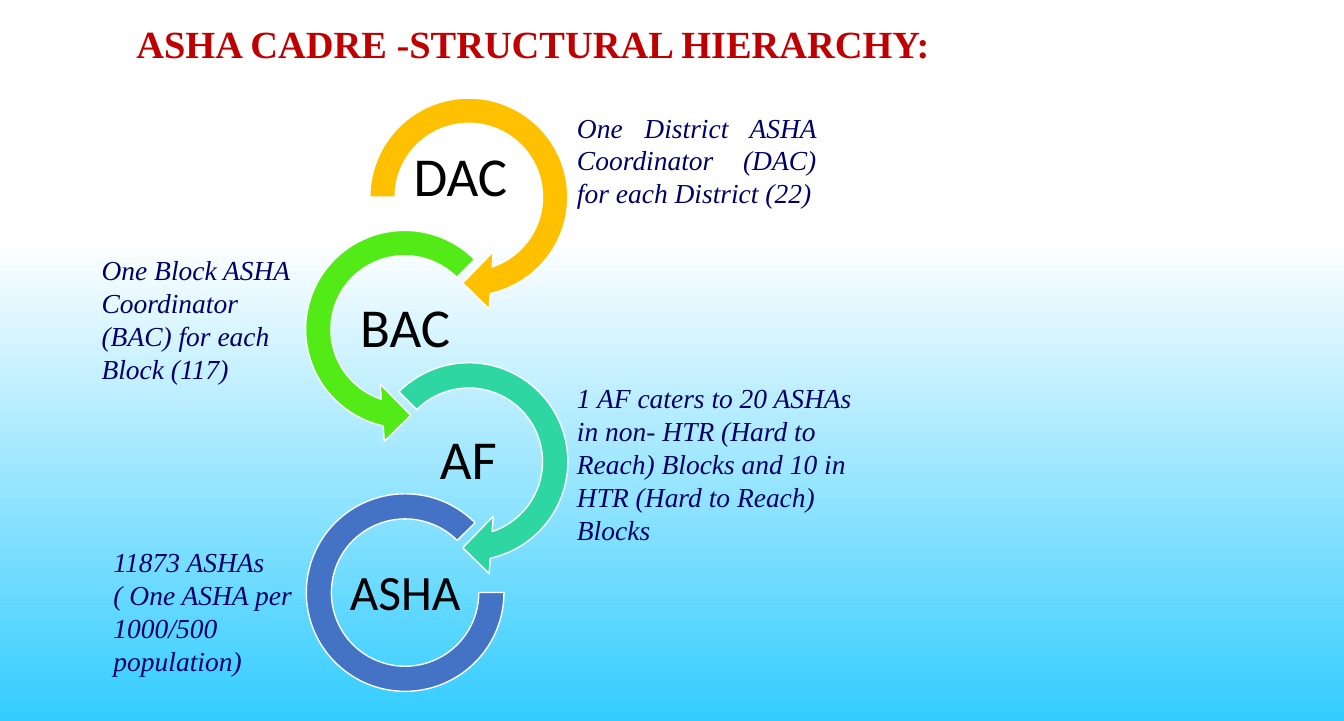
from pptx import Presentation
from pptx.dml.color import RGBColor
from pptx.enum.shapes import MSO_SHAPE
from pptx.enum.text import MSO_ANCHOR, MSO_AUTO_SIZE, PP_ALIGN
from pptx.util import Inches, Pt

WHITE = RGBColor(0xFF, 0xFF, 0xFF)
BLACK = RGBColor(0x00, 0x00, 0x00)
SKY = RGBColor(0x33, 0xCC, 0xFF)
RED = RGBColor(0xC0, 0x00, 0x00)
NAVY = RGBColor(0x00, 0x00, 0x66)
AMBER = RGBColor(0xFF, 0xC0, 0x00)
GREEN = RGBColor(0x53, 0xEB, 0x17)
TEAL = RGBColor(0x2E, 0xD7, 0xA1)
BLUE = RGBColor(0x44, 0x72, 0xC4)


def format_text(shape, text, font_name, size, color, alignment=PP_ALIGN.LEFT, spacing=1.0):
    frame = shape.text_frame
    frame.word_wrap = True
    frame.auto_size = MSO_AUTO_SIZE.NONE
    frame.text = text
    paragraph = frame.paragraphs[0]
    paragraph.alignment = alignment
    paragraph.line_spacing = spacing
    paragraph.font.name = font_name
    paragraph.font.size = Pt(size)
    paragraph.font.color.rgb = color
    return frame, paragraph


presentation = Presentation()
presentation.slide_width = Inches(13.6)
presentation.slide_height = Inches(7.3)
slide = presentation.slides.add_slide(presentation.slide_layouts[5])

background = slide.background.fill
background.gradient()
background.gradient_angle = 270
for stop, position, color in zip(background.gradient_stops, (0.33, 1), (WHITE, SKY)):
    stop.position = position
    stop.color.rgb = color

title = slide.shapes.title
title.left, title.top = Inches(1.28), Inches(0.21)
title.width, title.height = Inches(10.59), Inches(0.91)
frame, paragraph = format_text(
    title, "ASHA CADRE -STRUCTURAL HIERARCHY:", "Times New Roman", 28, RED, spacing=0.9)
frame.vertical_anchor = MSO_ANCHOR.TOP
paragraph.font.bold = True

PITCH = 1.34
levels = [
    ("DAC", 40, 1.0, 4.66, 1.44, MSO_SHAPE.CIRCULAR_ARROW, 3.58, 0.83, 2.33, AMBER,
     (0.1098, 11.423, 45, 108, 0.125)),
    ("BAC", 40, 0.9, 4.1, 3.01, MSO_SHAPE.LEFT_CIRCULAR_ARROW, 2.93, 0.83 + PITCH, 2.33, GREEN,
     (0.1098, 11.423, 63, 189, 0.125)),
    ("AF", 40, 0.9, 4.74, 3.01 + PITCH, MSO_SHAPE.CIRCULAR_ARROW, 3.58, 0.83 + 2 * PITCH, 2.33, TEAL,
     (0.1098, 11.423, 45, 135, 0.125)),
    ("ASHA", 36, 0.9, 4.1, 3.01 + 2 * PITCH, MSO_SHAPE.BLOCK_ARC, 3.1, 5, 2, BLUE,
     (0, 189, 0.127)),
]
LABEL_WIDTH = 1.3
for name, size, spacing, center, label_top, kind, left, top, diameter, color, adjustments in levels:
    ring = slide.shapes.add_shape(
        kind, Inches(left), Inches(top), Inches(diameter), Inches(diameter))
    for index, value in enumerate(adjustments):
        ring.adjustments[index] = value
    ring.shadow.inherit = False
    ring.fill.solid()
    ring.fill.fore_color.rgb = color
    ring.line.color.rgb = WHITE
    ring.line.width = Pt(1)

    label = slide.shapes.add_textbox(
        Inches(center - LABEL_WIDTH / 2), Inches(label_top), Inches(LABEL_WIDTH), Inches(0.65))
    frame, paragraph = format_text(
        label, name, "Calibri", size, BLACK, PP_ALIGN.CENTER, spacing)
    frame.vertical_anchor = MSO_ANCHOR.MIDDLE
    frame.margin_left = frame.margin_right = Inches(0.03)
    frame.margin_top = frame.margin_bottom = Inches(0.03)

descriptions = [
    ("One District ASHA Coordinator (DAC) for each District (22)",
     5.74, 1.07, 2.62, 1.11, PP_ALIGN.JUSTIFY),
    ("One Block ASHA Coordinator (BAC) for each Block (117)",
     0.93, 2.51, 2.33, 1.78, PP_ALIGN.LEFT),
    ("1 AF caters to 20 ASHAs in non- HTR (Hard to Reach) Blocks and 10 in HTR (Hard to Reach) Blocks",
     5.74, 3.81, 3.18, 2.05, PP_ALIGN.LEFT),
    ("11873 ASHAs\v( One ASHA per 1000/500 population)",
     1.05, 5.47, 2.33, 1.78, PP_ALIGN.LEFT),
]
for text, left, top, width, height, alignment in descriptions:
    description = slide.shapes.add_textbox(
        Inches(left), Inches(top), Inches(width), Inches(height))
    frame, paragraph = format_text(description, text, "Times New Roman", 20, NAVY, alignment)
    paragraph.font.italic = True

presentation.save("out.pptx")
